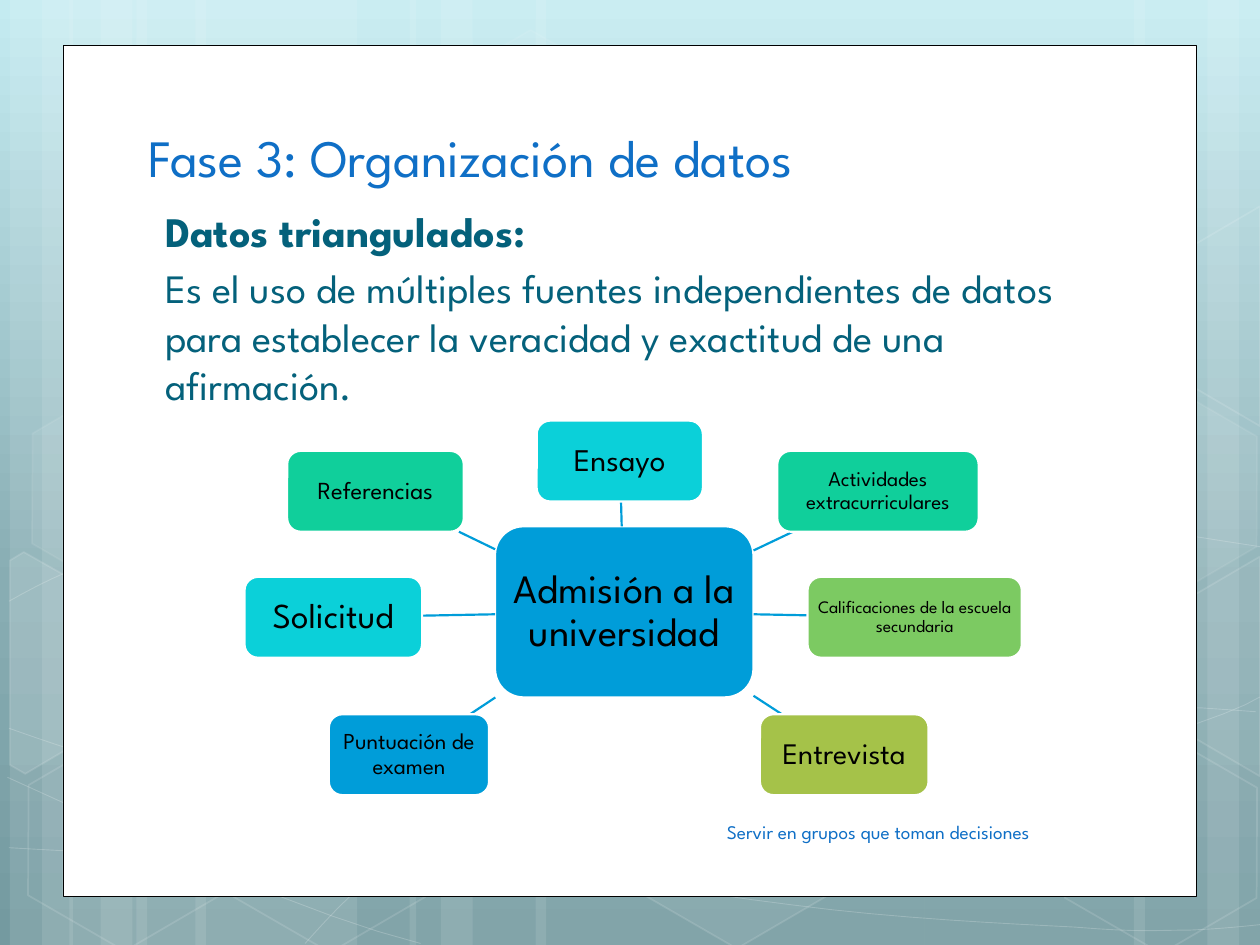
from copy import deepcopy
from dataclasses import dataclass

from lxml import etree
from pptx import Presentation
from pptx import util as u
from pptx.dml.color import RGBColor
from pptx.enum import shapes as kinds, text as txt
from pptx.oxml import ns


@dataclass(frozen=True)
class Theme:
    font: str = "League Spartan"
    sky: tuple = ((0, "C4EBF1"), (0.62, "88ADB3"), (1, "749AA0"))
    white: str = "FFFFFF"
    black: str = "000000"
    head: str = "0F6FC6"
    body: str = "04617B"
    blue: str = "009DD9"
    aqua: str = "0BD0D9"
    mint: str = "10CF9B"
    leaf: str = "7CCA62"
    lime: str = "A5C249"
    title: float = 30
    lead: float = 24
    main: float = 23
    foot: float = 11


T = Theme()
FORM = kinds.MSO_SHAPE
MID = txt.MSO_ANCHOR.MIDDLE
CENTER = txt.PP_ALIGN.CENTER

STRIPES = [(2.75, 4.45), (0.2, 1.27), (0.85, 2.12), (3.94, 4.45), (1.4, 1.27),
           (2.03, 2.12), (18.63, 4.45), (24.34, 1.06), (22.86, 2.12),
           (10.8, 7.83), (8.26, 1.27), (8.89, 2.12)]

CURVES = [
    [(0.18, 17.09), (1.55, 17.17), (2.92, 17.25), (4.83, 17.22), (6.73, 17.2),
     (9.09, 17.15), (11.63, 16.89), (14.17, 16.64), (17.78, 16.15),
     (20.12, 15.67), (22.43, 15.19), (24.82, 14.43), (25.4, 14.05)],
    [(0.18, 12.12), (0.91, 11.71), (1.65, 11.33), (3.07, 10.95), (4.52, 10.57),
     (6.58, 10.01), (8.81, 9.83), (11.07, 9.65), (13.82, 9.63), (16.61, 9.83),
     (19.41, 10.03), (24.05, 10.82), (25.4, 11.02)],
    [(0.15, 15.67), (3.23, 17.07), (6.27, 18.47), (8.48, 19.02)],
    [(0.18, 14.68), (0.97, 14.96), (1.78, 15.24), (3.25, 15.65), (4.72, 16.03),
     (6.93, 16.66), (9.07, 17.09), (11.18, 17.53), (13.84, 17.98),
     (15.95, 18.24), (18.06, 18.52), (20.32, 18.62), (21.67, 18.69),
     (22.99, 18.8), (23.34, 18.75), (24, 18.75), (24.66, 18.72),
     (25.12, 18.67), (25.4, 18.64)],
    [(6.15, 19.02), (6.6, 18.52), (7.06, 18.01), (7.67, 17.55), (8.28, 17.09),
     (9.14, 16.59), (9.86, 16.23), (10.57, 15.88), (11, 15.72), (11.94, 15.47),
     (12.85, 15.21), (14.55, 14.86), (15.44, 14.68), (16.36, 14.5),
     (16.48, 14.5), (17.27, 14.45), (18.06, 14.38), (19.3, 14.3),
     (20.17, 14.27), (21.06, 14.25), (22.5, 14.27), (22.5, 14.27),
     (22.5, 14.27), (24.21, 14.27), (24.21, 14.27), (24.66, 14.3),
     (25.1, 14.33), (25.32, 14.35)],
]

HEXES = [(8.48, 0.91, 4, 8), (12.62, 14.96, 6, 12), (0.28, 15.01, 0, 12),
         (0.36, 7.92, 7, 8), (4.42, 15.04, 0, 12), (21.18, 15.06, 0, 12),
         (21.18, 7.98, 7, 8)]

CUTS = [
    (10, [(0.2, 11.3), (0.48, 11.13), (2.44, 12.24), (2.41, 14.48),
          (0.51, 15.6), (0.2, 15.42)]),
    (4, [(23.52, 12.32), (25.4, 11.22), (25.4, 15.65), (23.52, 14.55)]),
    (0, [(23.52, 5.26), (25.4, 4.16), (25.4, 8.59), (23.52, 7.49)]),
]

HUB = (5.05, 2.13, 5.21, 3.45)
NODES = [
    ("Ensayo", 5.89, 0, 3.35, 18, T.aqua),
    ("Actividades extracurriculares", 10.74, 0.61, 4.06, 12, T.mint),
    ("Calificaciones de la escuela secundaria", 11.35, 3.15, 4.32, 10, T.leaf),
    ("Entrevista", 10.39, 5.92, 3.4, 17, T.lime),
    ("Puntuación de examen", 1.7, 5.92, 3.23, 13, T.blue),
    ("Solicitud", 0, 3.15, 3.58, 20, T.aqua),
    ("Referencias", 0.86, 0.61, 3.56, 14, T.mint),
]


def apply(thing, form):
    for name, value in form.items():
        setattr(thing, name, value)


def tint(fill, color, alpha=100):
    if not alpha:
        fill.background()
        return
    fill.solid()
    fill.fore_color.rgb = RGBColor.from_string(color)


def fade(shape, fill, line):
    for tag, alpha in (("a:solidFill", fill), ("a:ln/a:solidFill", line)):
        node = shape.element.spPr.find("/".join(map(ns.qn, tag.split("/"))))
        if node is not None and alpha < 100:
            etree.SubElement(node[0], ns.qn("a:alpha"), val=str(alpha * 1000))


def paint(shape, color, fill=100, line=0, width=1, edge=T.white):
    shape.shadow.inherit = False
    tint(shape.fill, color, fill)
    tint(shape.line.fill, edge, line)
    if line:
        shape.line.width = u.Pt(width)
    fade(shape, fill, line)
    return shape


def block(slide, form, box):
    return slide.shapes.add_shape(form, *map(u.Cm, box))


def trace(slide, box, points, closed):
    dots = [(u.Cm(box[0] + x), u.Cm(box[1] + y)) for x, y in points]
    build = slide.shapes.build_freeform(*dots[0])
    build.add_line_segments(dots[1:], close=closed)
    return build.convert_to_shape()


def smooth(knots, steps=8):
    points = [knots[0]]
    for i in range(0, len(knots) - 1, 3):
        a, b, c, d = knots[i:i + 4]
        for k in range(1, steps + 1):
            t = k / steps
            s = 1 - t
            points.append(tuple(
                s**3 * p + 3 * s * s * t * q + 3 * s * t * t * r + t**3 * v
                for p, q, r, v in zip(a, b, c, d)))
    return points


def write(frame, lines, **form):
    apply(frame, {"word_wrap": True, **form})
    for i, (words, size, color, bold, style) in enumerate(lines):
        para = frame.add_paragraph() if i else frame.paragraphs[0]
        apply(para, style)
        run = para.add_run()
        run.text = words
        apply(run.font, {"name": T.font, "size": u.Pt(size), "bold": bold})
        run.font.color.rgb = RGBColor.from_string(color)


def label(slide, box, lines, **form):
    area = slide.shapes.add_textbox(*map(u.Cm, box))
    write(area.text_frame, lines, **form)
    return area


def draw_sky(slide):
    fill = slide.background.fill
    fill.gradient()
    fill.gradient_angle = 270
    stops = next(slide.element.iter(ns.qn("a:gsLst")))
    stops.append(deepcopy(stops[-1]))
    for stop, (place, color) in zip(fill.gradient_stops, T.sky):
        stop.position = place
        stop.color.rgb = RGBColor.from_string(color)


def draw_decor(slide, box):
    left, top, _, high = box
    for x, wide in STRIPES:
        paint(block(slide, FORM.RECTANGLE, (left + x, top, wide, high)), T.white, 10)
    for knots in CURVES:
        paint(trace(slide, box, smooth(knots), False), T.white, 0, 20, 0.5)
    for x, y, fill, line in HEXES:
        cell = block(slide, FORM.HEXAGON, (left + x, top + y, 4.45, 3.86))
        cell.adjustments[0] = 0.285
        cell.rotation = 30
        paint(cell, T.white, fill, line)
    for fill, points in CUTS:
        paint(trace(slide, box, points, True), T.white, fill, 12)


def draw_panel(slide, box):
    left, top, _, _ = box
    paint(block(slide, FORM.RECTANGLE, box), T.white, 100, 100, 0.5, T.black)
    label(slide, (left + 1.47, top + 1, 19.51, 2),
          [("Fase 3: Organización de datos", T.title, T.head, False, {})],
          vertical_anchor=txt.MSO_ANCHOR.BOTTOM)
    area = label(slide, (left + 1.63, top + 3.1, 19.71, 12.19), [
        ("Datos triangulados:", T.lead, T.body, True, {}),
        ("Es el uso de múltiples fuentes independientes de datos para establecer "
         "la veracidad y exactitud de una afirmación.", T.main, T.body, False,
         {"space_before": u.Pt(4.6)})])
    for para in area.text_frame.paragraphs:
        para._p.get_or_add_pPr().set("marL", str(u.Cm(0.18)))
    label(slide, (left + 11.51, top + 15.35, 9.86, 1.02),
          [("Servir en grupos que toman decisiones", T.foot, T.head, False,
            {"alignment": CENTER})], vertical_anchor=MID)


def draw_node(slide, box, words, size, color):
    node = paint(block(slide, FORM.ROUNDED_RECTANGLE, box), color, 100, 100, 1.25)
    sides = ("left", "top", "right", "bottom")
    inset = {f"margin_{side}": u.Pt(size * 0.2) for side in sides}
    write(node.text_frame,
          [(words, size, T.black, False, {"alignment": CENTER, "line_spacing": 0.9})],
          vertical_anchor=MID, **inset)


def draw_spoke(slide, hub, node):
    (ax, ay), (bx, by) = ((x + w / 2, y + h / 2) for x, y, w, h in (hub, node))
    dx, dy = bx - ax, by - ay

    def reach(box):
        return 1 / max(2 * abs(dx) / box[2], 2 * abs(dy) / box[3])

    near, far = reach(hub), 1 - reach(node)
    ends = (ax + near * dx, ay + near * dy, ax + far * dx, ay + far * dy)
    spoke = slide.shapes.add_connector(kinds.MSO_CONNECTOR.STRAIGHT, *map(u.Cm, ends))
    tint(spoke.line.fill, T.blue)
    spoke.line.width = u.Pt(1.25)
    etree.SubElement(spoke.element.spPr, ns.qn("a:effectLst"))


def draw_wheel(slide, box):
    left, top, _, _ = box
    hub = (left + HUB[0], top + HUB[1], *HUB[2:])
    draw_node(slide, hub, "Admisión a la universidad", T.main, T.blue)
    for words, x, y, wide, size, color in NODES:
        node = (left + x, top + y, wide, 1.63)
        draw_spoke(slide, hub, node)
        draw_node(slide, node, words, size, color)


def main():
    deck = Presentation()
    apply(deck, {"slide_width": u.Cm(25.4), "slide_height": u.Cm(19.05)})
    slide = deck.slides.add_slide(deck.slide_layouts[6])
    draw_sky(slide)
    draw_decor(slide, (0, 0, 25.4, 19.05))
    draw_panel(slide, (1.27, 0.91, 22.86, 17.17))
    draw_wheel(slide, (4.93, 8.48, 15.67, 7.54))
    deck.save("out.pptx")


if __name__ == "__main__":
    main()
